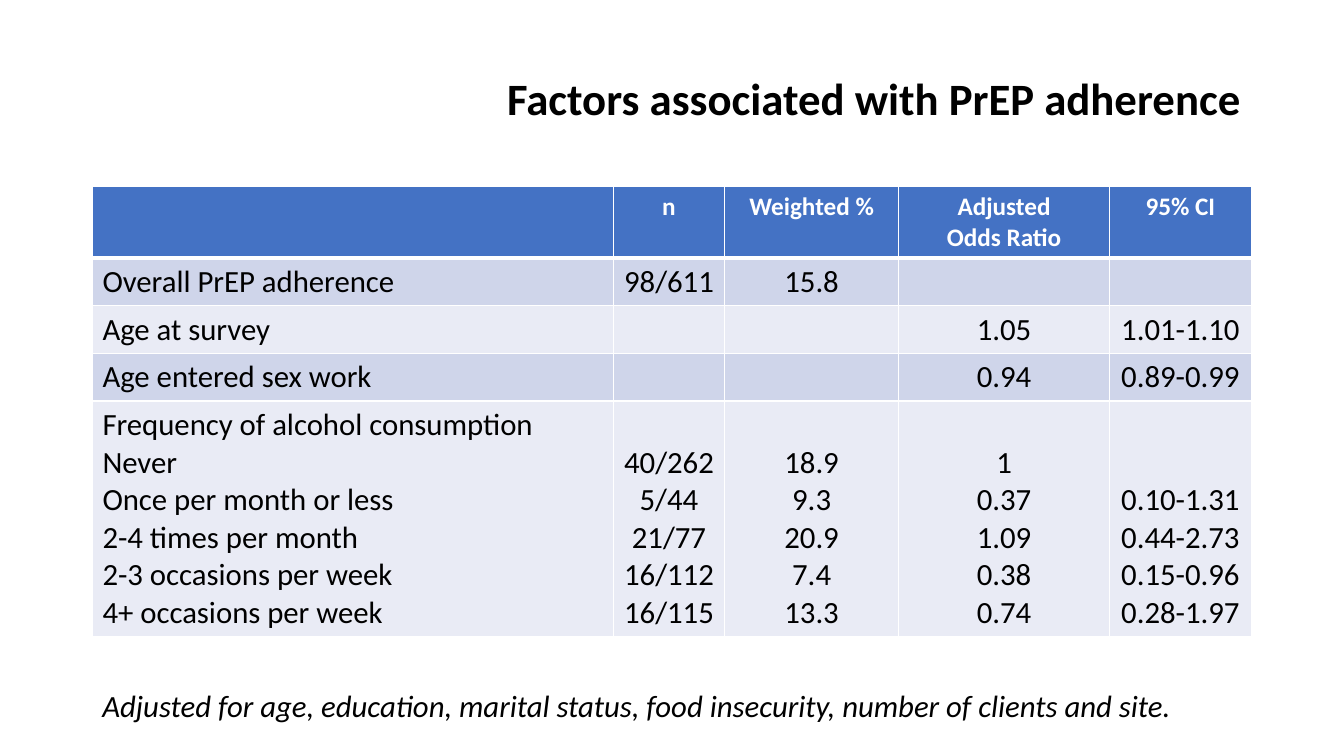
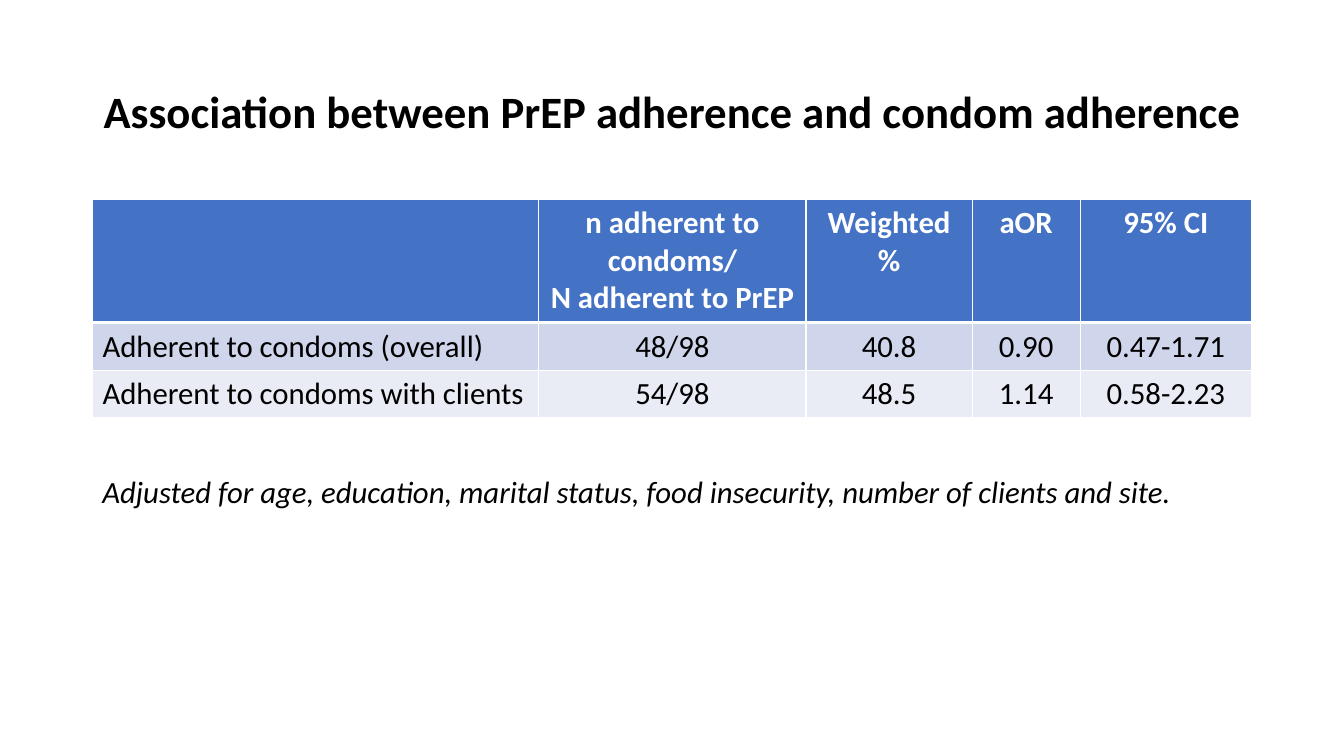
"""Build two slides of PrEP adherence tables."""
import dataclasses

import pptx
import pptx.dml.color
import pptx.enum.text
import pptx.oxml
import pptx.oxml.ns
import pptx.util

Cm = pptx.util.Cm
Pt = pptx.util.Pt
Align = pptx.enum.text.PP_ALIGN
Anchor = pptx.enum.text.MSO_ANCHOR


@dataclasses.dataclass(frozen=True)
class Theme:
    """Hold the colours, type sizes and margins."""
    font: str = "Calibri"
    ink: str = "000000"
    white: str = "FFFFFF"
    head: str = "4472C4"
    bands: tuple[str, str] = ("CFD5EA", "E9EBF5")
    title: int = 32
    body: int = 22
    thin: int = 1
    thick: int = 3
    left: float = 2.33
    width: float = 29.21


@dataclasses.dataclass(frozen=True)
class Page:
    """Describe one slide, with lengths in centimetres."""
    title: str
    top: float
    grid_top: float
    note_top: float
    head_size: int
    widths: tuple[float, ...]
    heights: tuple[float, ...]
    rows: tuple[tuple[str, ...], ...]


THEME = Theme()
NOTE = "Adjusted for age, education, marital status, food insecurity, number of clients and site."
ROW = 1.2
PAGES = (
    Page(
        "Factors associated with PrEP adherence", 0.71, 4.7, 17.17, 18,
        (13.13, 2.8, 4.39, 5.31, 3.58), (1.78, ROW, ROW, ROW, 5.93),
        (
            ("", "n", "Weighted %", "Adjusted\nOdds Ratio", "95% CI"),
            ("Overall PrEP adherence", "98/611", "15.8", "", ""),
            ("Age at survey", "", "", "1.05", "1.01-1.10"),
            ("Age entered sex work", "", "", "0.94", "0.89-0.99"),
            (
                "Frequency of alcohol consumption\nNever\nOnce per month or less\n"
                "2-4 times per month\n2-3 occasions per week\n4+ occasions per week",
                "40/262\n5/44\n21/77\n16/112\n16/115",
                "18.9\n9.3\n20.9\n7.4\n13.3",
                "1\n0.37\n1.09\n0.38\n0.74",
                "0.10-1.31\n0.44-2.73\n0.15-0.96\n0.28-1.97",
            ),
        ),
    ),
    Page(
        "Association between PrEP adherence and condom adherence", 1.02, 5.03, 11.79, 22,
        (11.25, 6.73, 4.19, 2.72, 4.32), (3.1, ROW, ROW),
        (
            ("", "n adherent to condoms/\nN adherent to PrEP", "Weighted %", "aOR", "95% CI"),
            ("Adherent to condoms (overall)", "48/98", "40.8", "0.90", "0.47-1.71"),
            ("Adherent to condoms with clients", "54/98", "48.5", "1.14", "0.58-2.23"),
        ),
    ),
)


def tint(code: str) -> pptx.dml.color.RGBColor:
    """Turn a hex code into a colour."""
    return pptx.dml.color.RGBColor.from_string(code)


def write(frame, text: str, size: int, color: str = THEME.ink, align=Align.LEFT,
          bold: bool = False, slant: bool = False) -> None:
    """Write each line of text as a paragraph with one run."""
    for i, line in enumerate(text.split("\n")):
        para = frame.paragraphs[0] if i == 0 else frame.add_paragraph()
        para.alignment = align
        run = para.add_run()
        run.text = line
        font = run.font
        font.name, font.size = THEME.font, Pt(size)
        font.bold, font.italic = bold, slant
        font.color.rgb = tint(color)


def edge(cell, top: int, base: int) -> None:
    """Draw white borders around a cell."""
    sides = {"lnL": THEME.thin, "lnR": THEME.thin, "lnT": top, "lnB": base}
    props = cell._tc.get_or_add_tcPr()
    for i, (side, width) in enumerate(sides.items()):
        props.insert(i, pptx.oxml.parse_xml(
            f'<a:{side} {pptx.oxml.ns.nsdecls("a")} w="{Pt(width)}"><a:solidFill>'
            f'<a:srgbClr val="{THEME.white}"/></a:solidFill></a:{side}>'))


def add_title(slide, page: Page) -> None:
    """Place and fill the title."""
    shape = slide.shapes.title
    shape.left, shape.top = Cm(THEME.left), Cm(page.top)
    shape.width, shape.height = Cm(THEME.width), Cm(3.68)
    frame = shape.text_frame
    frame.auto_size = pptx.enum.text.MSO_AUTO_SIZE.NONE
    frame.vertical_anchor = Anchor.MIDDLE
    write(frame, page.title, THEME.title, align=Align.RIGHT, bold=True)
    frame.paragraphs[0].line_spacing = 0.9


def add_grid(slide, page: Page) -> None:
    """Add the table with its header and banded rows."""
    grid = slide.shapes.add_table(
        len(page.rows), len(page.widths), Cm(THEME.left), Cm(page.grid_top),
        Cm(THEME.width), Cm(sum(page.heights))).table
    for col, width in zip(grid.columns, page.widths):
        col.width = Cm(width)
    for r, texts in enumerate(page.rows):
        grid.rows[r].height = Cm(page.heights[r])
        head = r == 0
        for c, text in enumerate(texts):
            cell = grid.cell(r, c)
            cell.vertical_anchor = Anchor.TOP if head else Anchor.BOTTOM
            cell.fill.solid()
            cell.fill.fore_color.rgb = tint(THEME.head if head else THEME.bands[(r - 1) % 2])
            edge(cell, THEME.thick if r == 1 else THEME.thin,
                 THEME.thick if head else THEME.thin)
            if text:
                write(cell.text_frame, text, page.head_size if head else THEME.body,
                      THEME.white if head else THEME.ink,
                      Align.CENTER if c else Align.LEFT, bold=head)


def add_note(slide, page: Page) -> None:
    """Add the note below the table."""
    box = slide.shapes.add_textbox(
        Cm(THEME.left), Cm(page.note_top), Cm(THEME.width), Cm(1.85))
    box.text_frame.word_wrap = True
    write(box.text_frame, NOTE, THEME.body, slant=True)


def main() -> None:
    """Build and save the deck."""
    deck = pptx.Presentation()
    deck.slide_width, deck.slide_height = Cm(33.87), Cm(19.05)
    for page in PAGES:
        slide = deck.slides.add_slide(deck.slide_layouts[5])
        add_title(slide, page)
        add_grid(slide, page)
        add_note(slide, page)
    deck.save("out.pptx")


if __name__ == "__main__":
    main()
